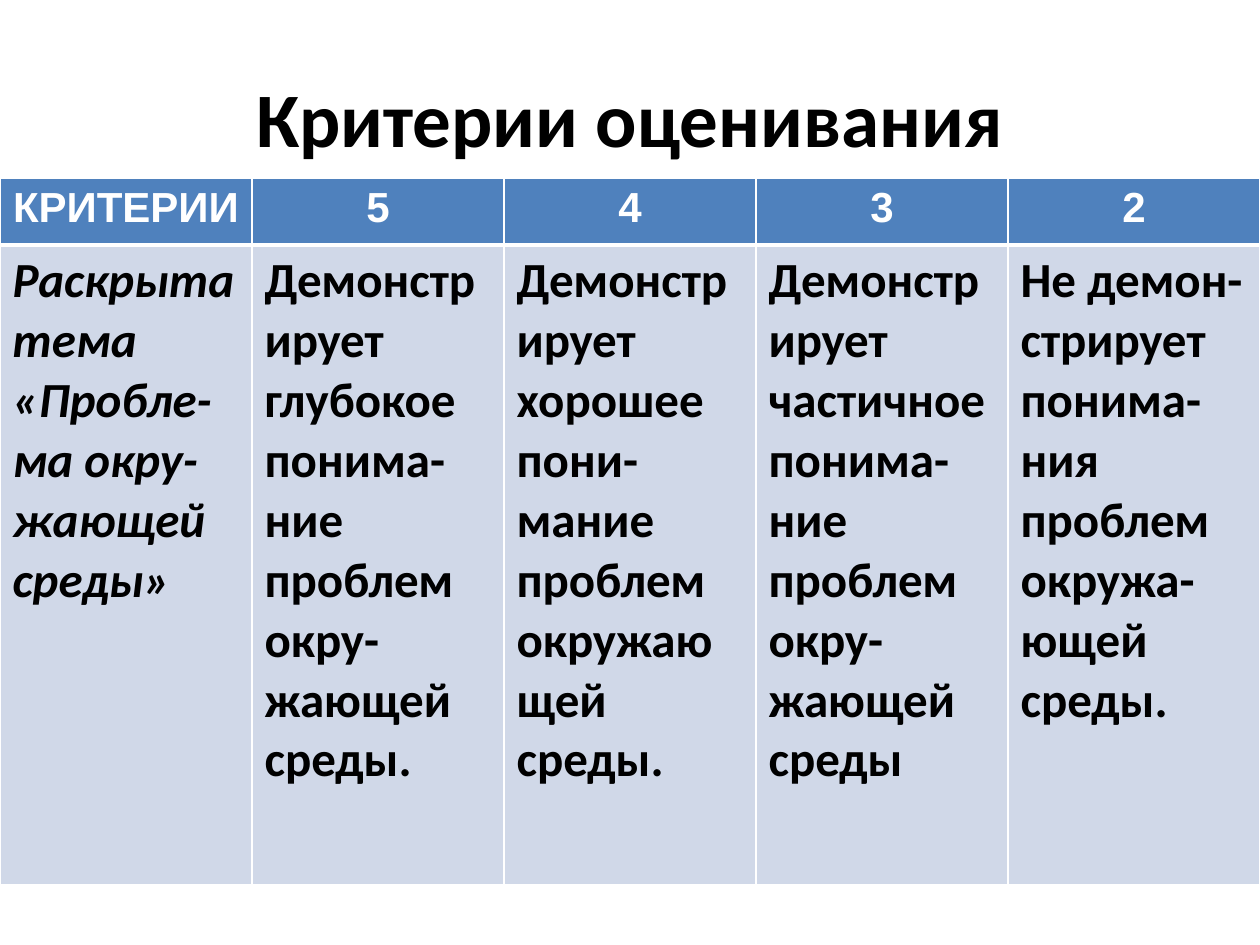
from dataclasses import dataclass

from lxml import etree
from pptx import Presentation
from pptx.dml.color import RGBColor
from pptx.enum.text import MSO_ANCHOR, PP_ALIGN
from pptx.oxml.ns import qn
from pptx.util import Emu, Pt

LEFT, CENTER = PP_ALIGN.LEFT, PP_ALIGN.CENTER
MIDDLE = MSO_ANCHOR.MIDDLE
PX_PER_INCH = 126
BLANK_LAYOUT = 6

HEADINGS = ["КРИТЕРИИ", "5", "4", "3", "2"]
CRITERION = ["Раскрыта тема", "«Пробле-ма окру-", "жающей среды»"]
DESCRIPTIONS = [
    ["Демонстрирует", "глубокое понима-", "ние проблем окру-жающей среды."],
    ["Демонстрирует", "хорошее пони-", "мание проблем", "окружающей", "среды."],
    ["Демонстрирует", "частичное понима-", "ние проблем окру-", "жающей среды"],
    ["Не демон-", "стрирует понима-", "ния проблем", "окружа-ющей", "среды."],
]


@dataclass(frozen=True)
class Theme:
    text: str = "000000"
    heading_text: str = "FFFFFF"
    heading_fill: str = "4F81BD"
    body_fill: str = "D0D8E8"
    border: str = "FFFFFF"
    font: str = "Calibri"
    heading_font: str = "Arial"
    title_size: int = 44
    heading_size: int = 24
    body_size: int = 28


def px(length):
    return Emu(round(length * 914400 / PX_PER_INCH))


def write_text(frame, lines, *, font, size, color, align=LEFT, italic=False):
    for index, line in enumerate(lines):
        paragraph = frame.paragraphs[0] if index == 0 else frame.add_paragraph()
        paragraph.alignment = align
        run = paragraph.add_run()
        run.text = line
        run.font.name = font
        run.font.size = Pt(size)
        run.font.bold = True
        run.font.italic = italic
        run.font.color.rgb = RGBColor.from_string(color)


class SlideBuilder:
    def __init__(self, slide, theme):
        self.slide = slide
        self.theme = theme

    def title(self, text, left, top, width, height):
        shape = self.slide.shapes.add_textbox(px(left), px(top), px(width), px(height))
        frame = shape.text_frame
        frame.word_wrap = True
        frame.vertical_anchor = MIDDLE
        write_text(frame, [text], font=self.theme.font, size=self.theme.title_size,
                   color=self.theme.text, align=CENTER)

    def table(self, left, top, column_widths, row_heights):
        shape = self.slide.shapes.add_table(
            len(row_heights), len(column_widths), px(left), px(top),
            px(sum(column_widths)), px(sum(row_heights)))
        table = shape.table
        table.horz_banding = False
        for column, width in zip(table.columns, column_widths):
            column.width = px(width)
        for row, height in zip(table.rows, row_heights):
            row.height = px(height)
        return table

    def borders(self, cell, **widths):
        """Draw the given sides, named L, R, T and B in schema order, in points."""
        properties = cell._tc.get_or_add_tcPr()
        for side, width in widths.items():
            line = etree.SubElement(properties, qn(f"a:ln{side}"), w=str(Pt(width)))
            fill = etree.SubElement(line, qn("a:solidFill"))
            etree.SubElement(fill, qn("a:srgbClr"), val=self.theme.border)

    def cell(self, cell, lines, fill, border_widths, **text_format):
        self.borders(cell, **border_widths)
        cell.fill.solid()
        cell.fill.fore_color.rgb = RGBColor.from_string(fill)
        write_text(cell.text_frame, lines, **text_format)

    def heading_cell(self, cell, text):
        theme = self.theme
        self.cell(cell, [text], theme.heading_fill, dict(L=1, R=1, T=1, B=3),
                  font=theme.heading_font, size=theme.heading_size,
                  color=theme.heading_text, align=CENTER)

    def body_cell(self, cell, lines, italic=False):
        theme = self.theme
        self.cell(cell, lines, theme.body_fill, dict(L=1, R=1, T=3, B=1),
                  font=theme.font, size=theme.body_size, color=theme.text,
                  italic=italic)


def main():
    presentation = Presentation()
    presentation.slide_width = px(1260)
    presentation.slide_height = px(945)
    slide = presentation.slides.add_slide(presentation.slide_layouts[BLANK_LAYOUT])
    builder = SlideBuilder(slide, Theme())

    builder.title("Критерии оценивания", 63, 38, 1134, 157)
    table = builder.table(0, 178, [252] * len(HEADINGS), [67, 640])
    for column, heading in enumerate(HEADINGS):
        builder.heading_cell(table.cell(0, column), heading)
    for column, lines in enumerate([CRITERION, *DESCRIPTIONS]):
        builder.body_cell(table.cell(1, column), lines, italic=column == 0)

    presentation.save("out.pptx")


if __name__ == "__main__":
    main()
